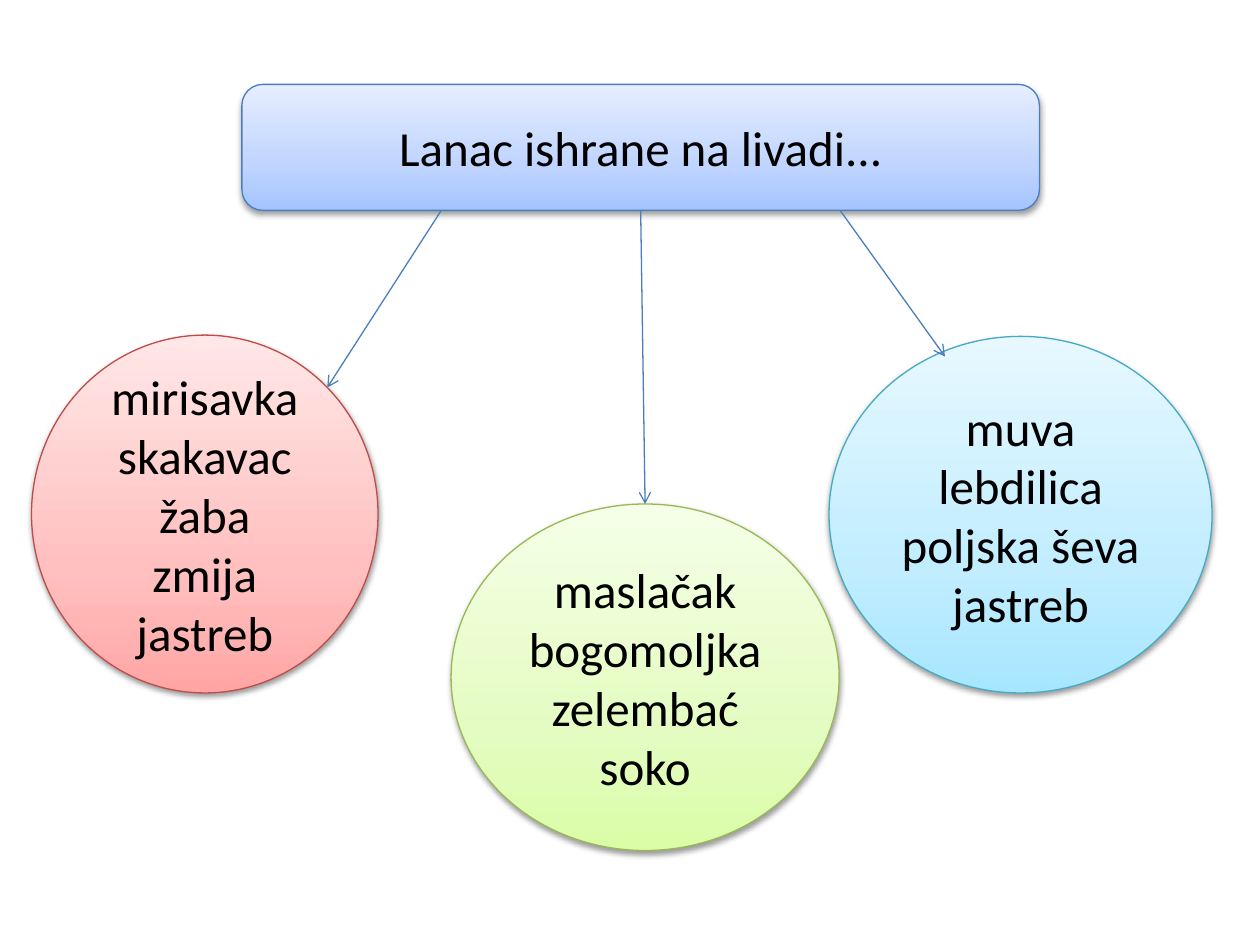
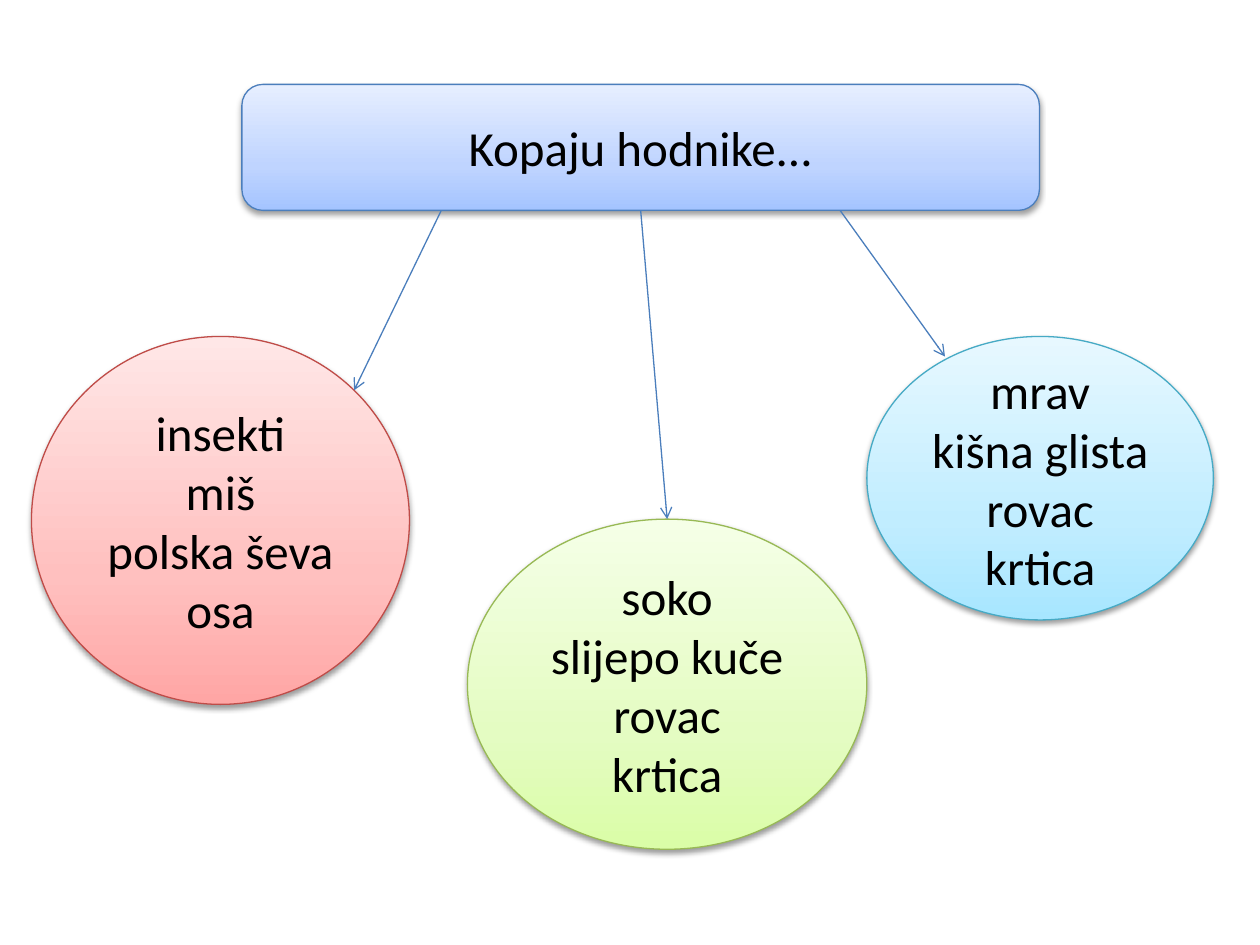
from copy import deepcopy
from math import sqrt

from pptx import Presentation
from pptx.dml.color import RGBColor
from pptx.enum.shapes import MSO_CONNECTOR, MSO_SHAPE
from pptx.enum.text import MSO_ANCHOR, PP_ALIGN
from pptx.oxml import parse_xml
from pptx.oxml.ns import nsdecls, qn
from pptx.util import Inches, Pt

# Each ball: (left, top, width, height), lines
SLIDES = [
    {
        "title": "Lanac ishrane na livadi...",
        "red": ((0.25, 2.66, 2.75, 2.84),
                ["mirisavka", "skakavac", "žaba", "zmija", "jastreb"]),
        "green": ((3.58, 4, 3.08, 2.75),
                  ["maslačak", "bogomoljka", "zelembać", "soko"]),
        "blue": ((6.58, 2.67, 3.04, 2.83),
                 ["muva lebdilica", "poljska ševa", "jastreb"]),
    },
    {
        "title": "Kopaju hodnike...",
        "red": ((0.25, 2.67, 3, 2.92),
                ["insekti", "miš", "polska ševa", "osa"]),
        "green": ((3.71, 4.12, 3.17, 2.62),
                  ["soko", "slijepo kuče", "rovac", "krtica"]),
        "blue": ((6.88, 2.67, 2.75, 2.25),
                 ["mrav", "kišna glista", "rovac", "krtica"]),
    },
]

# Gradient from bottom to top, then outline
STYLES = {
    "title": (["A4C4FF", "BFD4FF", "E6EEFF"], "4B7EBC"),
    "red": (["FFA6A5", "FFC0BF", "FFE7E7"], "BF4C48"),
    "green": (["DAFDA7", "E4FCC2", "F5FFE7"], "98B955"),
    "blue": (["A7E6FF", "C1EDFF", "E7F8FF"], "46AAC5"),
}
STOPS = [0, 0.35, 1]
TITLE_BOX = (1.92, 0.67, 6.33, 1)
BLUE_TIP = (7.5, 2.83)
ARROW = "4B7EBC"
FONT = "Calibri"

SHADOW = (f'<a:outerShdw {nsdecls("a")} blurRad="{Pt(3.1)}" dist="{Pt(1.6)}" '
          'dir="5400000" rotWithShape="0"><a:srgbClr val="000000">'
          '<a:alpha val="38000"/></a:srgbClr></a:outerShdw>')


def color(code):
    return RGBColor.from_string(code)


def write(shape, lines, size=28, ink="000000", align=PP_ALIGN.CENTER):
    frame = shape.text_frame
    frame.word_wrap = True
    frame.vertical_anchor = MSO_ANCHOR.MIDDLE
    frame.text = "\n".join(lines)
    for para in frame.paragraphs:
        para.alignment = align
        para.font.name = FONT
        para.font.size = Pt(size)
        para.font.color.rgb = color(ink)


def add_panel(slide, kind, box, style, lines):
    """Add a shape with a vertical gradient, a soft shadow and centred text."""
    shades, edge = STYLES[style]
    shape = slide.shapes.add_shape(kind, *map(Inches, box))
    shape.fill.gradient()
    shape.fill.gradient_angle = 90
    stops = shape._element.spPr.find(".//" + qn("a:gsLst"))
    stops.insert(1, deepcopy(stops[0]))
    for stop, place, shade in zip(shape.fill.gradient_stops, STOPS, shades):
        stop.position = place
        stop.color.rgb = color(shade)
    shape.line.color.rgb = color(edge)
    shape.line.width = Pt(0.75)
    shape.shadow.inherit = False
    shape._element.spPr.find(qn("a:effectLst")).append(parse_xml(SHADOW))
    write(shape, lines)
    return shape


def add_arrow(slide, start, end):
    arrow = slide.shapes.add_connector(
        MSO_CONNECTOR.STRAIGHT, *map(Inches, (*start, *end)))
    arrow.line.color.rgb = color(ARROW)
    arrow.line.width = Pt(0.75)
    arrow.line._get_or_add_ln().append(
        parse_xml(f'<a:tailEnd {nsdecls("a")} type="arrow"/>'))
    arrow._element.spPr.append(parse_xml(f'<a:effectLst {nsdecls("a")}/>'))
    return arrow


def shoulder(box):
    """Return the point on an ellipse halfway between its top and right."""
    left, top, width, height = box
    reach = sqrt(0.5) / 2
    return left + width * (0.5 + reach), top + height * (0.5 - reach)


def add_chain(deck, data):
    slide = deck.slides.add_slide(deck.slide_layouts[6])
    balls = {name: add_panel(slide, MSO_SHAPE.OVAL, data[name][0], name,
                             data[name][1])
             for name in ("red", "green", "blue")}
    head = add_panel(slide, MSO_SHAPE.ROUNDED_RECTANGLE, TITLE_BOX, "title",
                     [data["title"]])

    left, top, width, height = TITLE_BOX
    starts = [(left + width * part / 4, top + height) for part in (1, 2, 3)]
    box = data["green"][0]
    ends = [shoulder(data["red"][0]), (box[0] + box[2] / 2, box[1]), BLUE_TIP]
    arrows = [add_arrow(slide, *ride) for ride in zip(starts, ends)]
    arrows[1].begin_connect(head, 2)
    arrows[1].end_connect(balls["green"], 0)


def main():
    deck = Presentation()
    deck.slide_width, deck.slide_height = Inches(10), Inches(7.5)
    for data in SLIDES:
        add_chain(deck, data)
    deck.save("out.pptx")


if __name__ == "__main__":
    main()
